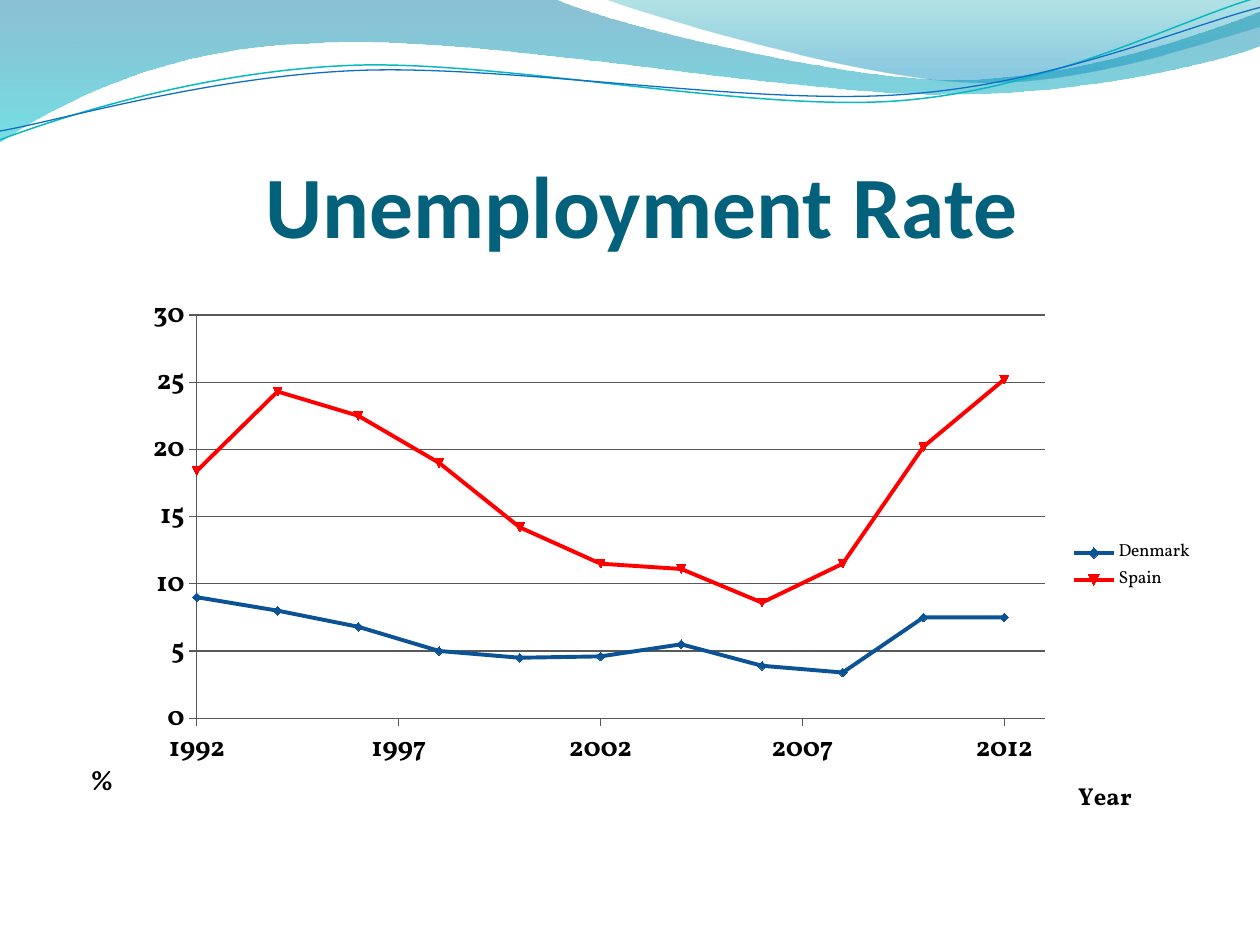
"""Build the unemployment rate slide with its wave header and line chart."""
from math import cos, radians, sin

from lxml.etree import SubElement
from pptx import Presentation
from pptx.chart.data import XyChartData
from pptx.dml.color import RGBColor
from pptx.enum.chart import XL_CHART_TYPE as ChartType
from pptx.enum.chart import XL_LEGEND_POSITION as LegendPosition
from pptx.enum.chart import XL_MARKER_STYLE as MarkerStyle
from pptx.enum.chart import XL_TICK_MARK as TickMark
from pptx.enum.text import MSO_AUTO_SIZE as AutoSize
from pptx.oxml.ns import qn
from pptx.util import Pt

YEARS = range(1992, 2013, 2)
DENMARK = [9, 8, 6.8, 5, 4.5, 4.6, 5.5, 3.9, 3.4, 7.5, 7.5]
SPAIN = [18.4, 24.3, 22.5, 19, 14.2, 11.5, 11.1, 8.6, 11.5, 20.2, 25.2]
CHART_WIDTH, CHART_HEIGHT = 646.5, 323.3
CURVE_TILT = -2.7

LEFT_WAVE = [
    [(0, 0)], [(316.8, -0.7)],
    [(342.7, 12.2), (478.1, 45.4), (545.8, 45.4)],
    [(614.2, 45.4), (689.8, 18.7), (720, 6.5)],
    [(720.7, 25.9)],
    [(707.8, 31.7), (626.4, 54.7), (537.1, 54)],
    [(447.8, 54), (275, 20.2), (185, 24.5)],
    [(92.9, 25.9), (33.1, 59.8), (-0.7, 81.4)],
    [(0, 0)],
]
RIGHT_WAVE = [
    [(344.9, -0.7)],
    [(366.5, 7.9), (491, 44.6), (553.7, 46.8)],
    [(616.3, 49.7), (691.9, 23), (720, 15.1)],
    [(720, 0)], [(344.9, -0.7)],
]
TEAL_CURVE = [
    [(0, 79.9)],
    [(34.6, 67), (113.8, 41), (199.4, 37.4)],
    [(284.4, 33.8), (427, 64.1), (513.4, 57.6)],
    [(599.8, 51.1), (675.4, 10.8), (718.6, -1.4)],
]
BLUE_CURVE = [
    [(0, 74.9)],
    [(33.8, 69.1), (118.1, 43.9), (203.8, 40.3)],
    [(290.2, 36.7), (429.8, 60.5), (516.2, 54)],
    [(601.9, 48.2), (677.5, 15.1), (720, 4.3)],
]


def color(value):
    """Return the colour for a hex string."""
    return RGBColor.from_string(value)


def add_outline(page, segments, closed):
    """Add a freeform whose three-point segments are cubic curves."""
    corners = [(Pt(x), Pt(y)) for segment in segments for x, y in segment]
    builder = page.shapes.build_freeform(*corners[0])
    builder.add_line_segments(corners[1:], close=closed)
    shape = builder.convert_to_shape()
    shape.shadow.inherit = False
    steps = shape.element.iter(qn("a:lnTo"))
    lines = iter(list(steps))
    for segment in segments[1:]:
        group = [next(lines) for _ in segment]
        if len(group) == 3:
            group[0].tag = qn("a:cubicBezTo")
            for line in group[1:]:
                group[0].append(line[0])
                line.getparent().remove(line)
    return shape


def add_wave(page, segments, stops):
    """Add a closed wave with a translucent gradient running downwards."""
    shape = add_outline(page, segments, True)
    shape.line.fill.background()
    shape.fill.gradient()
    shape.fill.gradient_angle = 270
    for stop, (position, value, _) in zip(shape.fill.gradient_stops, stops):
        stop.position = position
        stop.color.rgb = color(value)
    tags = shape.element.iter(qn("a:srgbClr"))
    for tag, (_, _, opacity) in zip(tags, stops):
        SubElement(tag, qn("a:alpha"), val=str(opacity * 1000))


def turn(point, center, degrees):
    """Return a point turned clockwise about a center."""
    angle = radians(degrees)
    x, y = point[0] - center[0], point[1] - center[1]
    return (center[0] + x * cos(angle) - y * sin(angle),
            center[1] + x * sin(angle) + y * cos(angle))


def add_curve(page, segments, value, width):
    """Add a thin open curve as a level shape tilted into place."""
    center = [(a + b) / 2 for a, b in zip(segments[0][0], segments[-1][-1])]
    level = [[turn(point, center, -CURVE_TILT) for point in segment] for segment in segments]
    shape = add_outline(page, level, False)
    shape.rotation = CURVE_TILT
    shape.fill.background()
    shape.line.color.rgb = color(value)
    shape.line.width = Pt(width)


def style_font(font, name, size, value, bold):
    """Set the name, size, colour and weight of a font."""
    font.name = name
    font.size = Pt(size)
    font.color.rgb = color(value)
    font.bold = bold


def add_title(page, text):
    """Add the slide heading."""
    box = page.shapes.add_textbox(Pt(144.7), Pt(82.8), Pt(448.6), Pt(67.7))
    frame = box.text_frame
    frame.word_wrap = False
    frame.auto_size = AutoSize.SHAPE_TO_FIT_TEXT
    frame.text = text
    style_font(frame.paragraphs[0].runs[0].font, "Calibri", 50, "04617B", True)


def style_axis(axis, title, title_size, low, high):
    """Set the range, ticks, fonts and title of an axis."""
    axis.minimum_scale, axis.maximum_scale, axis.major_unit = low, high, 5
    axis.major_tick_mark = TickMark.OUTSIDE
    axis.minor_tick_mark = TickMark.NONE
    axis.format.line.color.rgb = color("595959")
    axis.tick_labels.number_format = "General"
    axis.tick_labels.number_format_is_linked = False
    style_font(axis.tick_labels.font, "Vollkorn", 16, "000000", True)
    frame = axis.axis_title.text_frame
    frame.text = title
    style_font(frame.paragraphs[0].runs[0].font, "Vollkorn", title_size, "000000", True)


def style_series(series, value, marker=None):
    """Set the line and marker of a series."""
    series.smooth = False
    series.format.line.color.rgb = color(value)
    series.format.line.width = Pt(2.25)
    if marker is not None:
        series.marker.style = marker
    series.marker.size = 5
    series.marker.format.fill.solid()
    series.marker.format.fill.fore_color.rgb = color(value)
    series.marker.format.line.color.rgb = color(value)


def place(element, **lengths):
    """Give a chart part a manual layout in points from the chart corner."""
    for old in element.findall(qn("c:layout")):
        element.remove(old)
    layout = SubElement(element, qn("c:layout"))
    manual = SubElement(layout, qn("c:manualLayout"))
    if element.tag == qn("c:plotArea"):
        SubElement(manual, qn("c:layoutTarget"), val="inner")
    for name in ("x", "y"):
        SubElement(manual, qn(f"c:{name}Mode"), val="edge")
    for name, length in lengths.items():
        whole = CHART_WIDTH if name in "xw" else CHART_HEIGHT
        SubElement(manual, qn(f"c:{name}"), val=str(length / whole))
    overlay = element.find(qn("c:overlay"))
    if overlay is None:
        element.insert(0, layout)
    else:
        overlay.addprevious(layout)


def add_rate_chart(page):
    """Add the scatter chart of unemployment by year."""
    data = XyChartData()
    for name, rates in (("Denmark", DENMARK), ("Spain", SPAIN)):
        series = data.add_series(name)
        for year, rate in zip(YEARS, rates):
            series.add_data_point(year, rate)
    chart = page.shapes.add_chart(ChartType.XY_SCATTER_LINES, Pt(42.5), Pt(162),
                                  Pt(CHART_WIDTH), Pt(CHART_HEIGHT), data).chart
    chart.has_title = False
    style_font(chart.font, "Vollkorn", 10, "000000", False)
    chart.plots[0].vary_by_categories = False
    style_axis(chart.category_axis, "Year", 14, 1992, 2013)
    style_axis(chart.value_axis, "%", 16, 0, 30)
    chart.category_axis.has_major_gridlines = False
    chart.value_axis.major_gridlines.format.line.color.rgb = color("595959")
    denmark, spain = chart.plots[0].series
    style_series(denmark, "0B5395", MarkerStyle.DIAMOND)
    style_series(spain, "FF0000")
    chart.has_legend = True
    chart.legend.position = LegendPosition.RIGHT
    chart.legend.include_in_layout = False
    year_title, percent_title = chart.element.iter(qn("c:title"))
    percent_title.find(".//" + qn("a:bodyPr")).set("rot", "0")
    place(year_title, x=571, y=280.5)
    place(percent_title, x=6, y=270)
    place(chart.element.find(".//" + qn("c:plotArea")), x=70, y=18, w=484.5, h=230.5)
    place(chart.element.find(".//" + qn("c:legend")), x=565.5, y=145.5, w=77.5, h=32.5)


def main():
    """Build and save the deck."""
    deck = Presentation()
    deck.slide_width, deck.slide_height = Pt(720), Pt(540)
    page = deck.slides.add_slide(deck.slide_layouts[6])
    add_wave(page, LEFT_WAVE, [(0, "0074A1", 45), (1, "00C6CF", 55)])
    add_wave(page, RIGHT_WAVE, [(0, "00A1A9", 30), (0.8, "008BBF", 45)])
    add_curve(page, TEAL_CURVE, "0AB8BF", 0.85)
    add_curve(page, BLUE_CURVE, "0F6FC6", 0.75)
    add_rate_chart(page)
    add_title(page, "Unemployment Rate")
    deck.save("out.pptx")


if __name__ == "__main__":
    main()
